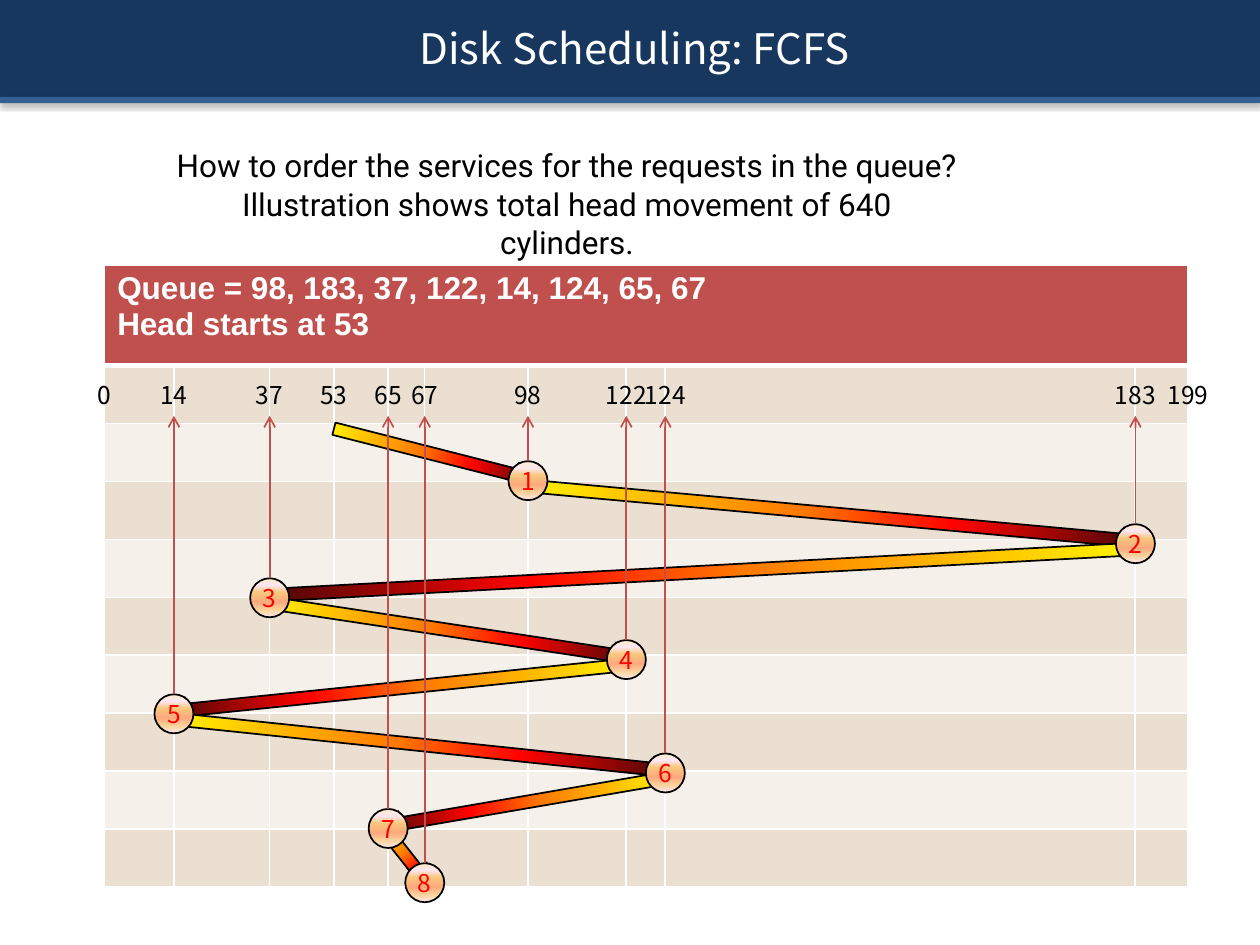
from dataclasses import dataclass
from itertools import accumulate
from math import atan2, degrees, hypot

from lxml import etree
from pptx import Presentation
from pptx.dml.color import RGBColor
from pptx.enum.shapes import MSO_CONNECTOR, MSO_SHAPE
from pptx.enum.text import MSO_ANCHOR, PP_ALIGN
from pptx.oxml.ns import qn
from pptx.util import Pt

RECT, OVAL, ARROW = MSO_SHAPE.RECTANGLE, MSO_SHAPE.OVAL, MSO_SHAPE.RIGHT_ARROW
STRAIGHT = MSO_CONNECTOR.STRAIGHT
LEFT, CENTER = PP_ALIGN.LEFT, PP_ALIGN.CENTER
TOP, MIDDLE = MSO_ANCHOR.TOP, MSO_ANCHOR.MIDDLE


@dataclass(frozen=True)
class Theme:
    navy: str = "17375E"
    blue: str = "376092"
    red: str = "C0504D"
    number: str = "FF0000"
    black: str = "000000"
    white: str = "FFFFFF"
    bands: tuple = ("EBDFD1", "F5F0EA")
    fire: tuple = ((0, "FFF200"), (45, "FF7A00"), (70, "FF0300"), (100, "4D0808"))
    peach: tuple = ((0, "FBEAC7"), (18, "FEE7F2"), (36, "FAC77D"),
                    (61, "FBA97D"), (82, "FBD49C"), (100, "FEE7F2"))
    title_font: str = "Noto Sans CJK KR"
    body_font: str = "Roboto"
    table_font: str = "Arial"
    title: int = 24
    body: int = 18
    label: int = 14


def add_xml(parent, tag, **attrs):
    return etree.SubElement(parent, qn(tag), {k: str(v) for k, v in attrs.items()})


def add_shadow(effects, color, blur, dist, angle, alpha):
    shadow = add_xml(effects, "a:outerShdw", blurRad=Pt(blur), dist=Pt(dist),
                     dir=angle * 60000, algn="ctr", rotWithShape=0)
    add_xml(add_xml(shadow, "a:srgbClr", val=color), "a:alpha", val=alpha * 1000)


def write(tf, text, *, size, font, color, align=LEFT, anchor=TOP, bold=False,
          wrap=True, inset=7.2, shadow=None):
    """Fill a text frame, one paragraph for each line of text."""
    tf.word_wrap = wrap
    tf.vertical_anchor = anchor
    tf.margin_left = tf.margin_right = Pt(inset)
    for i, line in enumerate(text.split("\n")):
        p = tf.paragraphs[0] if i == 0 else tf.add_paragraph()
        p.alignment = align
        r = p.add_run()
        r.text = line
        r.font.size, r.font.name, r.font.bold = Pt(size), font, bold
        r.font.color.rgb = RGBColor.from_string(color)
        if shadow:
            effects = etree.Element(qn("a:effectLst"))
            add_shadow(effects, shadow, 2, 1.5, 45, 100)
            r.font.fill._xPr.find(qn("a:solidFill")).addnext(effects)


class Deck:
    def __init__(self, theme):
        self.t = theme
        self.prs = Presentation()
        self.prs.slide_width, self.prs.slide_height = Pt(720), Pt(540)
        self.s = self.prs.slides.add_slide(self.prs.slide_layouts[6])

    def bar(self, y, h, color):
        sp = self.s.shapes.add_shape(RECT, 0, Pt(y), Pt(720), Pt(h))
        sp.fill.solid()
        sp.fill.fore_color.rgb = RGBColor.from_string(color)
        sp.line.fill.background()
        sp.shadow.inherit = False
        add_shadow(sp._element.spPr.find(qn("a:effectLst")),
                   self.t.black, 3.1, 1.6, 90, 38)

    def text(self, x, y, w, h, text, **fmt):
        sp = self.s.shapes.add_textbox(Pt(x), Pt(y), Pt(w), Pt(h))
        write(sp.text_frame, text, **fmt)

    def gradient_shape(self, kind, x, y, w, h, stops, angle):
        """Outlined preset shape centred on x, y."""
        sp = self.s.shapes.add_shape(kind, Pt(x - w / 2), Pt(y - h / 2), Pt(w), Pt(h))
        sp.shadow.inherit = False
        sp.line.color.rgb = RGBColor.from_string(self.t.black)
        sp.line.width = Pt(1)
        sp.fill.gradient()
        grad = sp._element.spPr.find(qn("a:gradFill"))
        grad.clear()
        grad.set("rotWithShape", "1")
        gs_list = add_xml(grad, "a:gsLst")
        for pos, color in stops:
            add_xml(add_xml(gs_list, "a:gs", pos=pos * 1000), "a:srgbClr", val=color)
        add_xml(grad, "a:lin", ang=angle * 60000, scaled=0)
        return sp

    def block_arrow(self, x1, y1, x2, y2):
        dx, dy = x2 - x1, y2 - y1
        sp = self.gradient_shape(ARROW, (x1 + x2) / 2, (y1 + y2) / 2,
                                 hypot(dx, dy), 14.4, self.t.fire, 0)
        sp.rotation = degrees(atan2(dy, dx))

    def node(self, x, y, size, text):
        sp = self.gradient_shape(OVAL, x, y, size, size, self.t.peach, 90)
        write(sp.text_frame, text, size=self.t.label, font=self.t.title_font,
              color=self.t.number, align=CENTER, anchor=MIDDLE, wrap=False)
        return sp

    def pointer(self, node, x, y_from, y_to):
        c = self.s.shapes.add_connector(STRAIGHT, Pt(x), Pt(y_from), Pt(x), Pt(y_to))
        c.begin_connect(node, 0)
        c.line.color.rgb = RGBColor.from_string(self.t.red)
        c.line.width = Pt(1)
        add_xml(c.line._get_or_add_ln(), "a:tailEnd", type="arrow")
        add_xml(c._element.spPr, "a:effectLst")

    def cell(self, cell, fill, top=1, bottom=1):
        cell.fill.solid()
        cell.fill.fore_color.rgb = RGBColor.from_string(fill)
        tc_pr = cell._tc.get_or_add_tcPr()
        for i, (side, width) in enumerate(zip("LRTB", (1, 1, top, bottom))):
            ln = etree.Element(qn(f"a:ln{side}"), w=str(Pt(width)))
            add_xml(add_xml(ln, "a:solidFill"), "a:srgbClr", val=self.t.white)
            tc_pr.insert(i, ln)

    def table(self, x, y, widths, heights, heading):
        tbl = self.s.shapes.add_table(len(heights), len(widths), Pt(x), Pt(y),
                                      Pt(sum(widths)), Pt(sum(heights))).table
        tbl.first_row = tbl.horz_banding = False
        for col, w in zip(tbl.columns, widths):
            col.width = Pt(w)
        for i, (row, h) in enumerate(zip(tbl.rows, heights)):
            row.height = Pt(h)
            fill = self.t.bands[(i - 1) % 2] if i else self.t.red
            for cell in row.cells:
                self.cell(cell, fill, 3 if i == 1 else 1, 1 if i else 3)
        tbl.cell(0, 0).merge(tbl.cell(0, len(widths) - 1))
        write(tbl.cell(0, 0).text_frame, heading, size=self.t.body,
              font=self.t.table_font, color=self.t.white, bold=True)


def main():
    t = Theme()
    d = Deck(t)

    # Title band
    d.bar(0, 55.4, t.navy)
    d.bar(55.4, 3.6, t.blue)
    d.text(16.6, 4.3, 692, 46, "Disk Scheduling: FCFS", size=t.title,
           font=t.title_font, color=t.white, align=CENTER, anchor=MIDDLE, shadow=t.black)

    # Introduction
    intro = dict(size=t.body, font=t.body_font, color=t.black, align=CENTER, anchor=MIDDLE)
    d.text(91, 79.9, 466, 28.8,
           "How to order the services for the requests in the queue?", **intro)
    d.text(91, 113, 466, 28.8,
           "Illustration shows total head movement of 640 cylinders.", inset=14, **intro)

    # Cylinder grid: each column border stands at one cylinder
    queue, head = [98, 183, 37, 122, 14, 124, 65, 67], 53
    cylinders = sorted([0, head, 199] + queue)
    grid_x = 59.8
    widths = [39.6, 54.7, 36.7, 31, 20.9, 59, 56.2, 22.3, 268.6, 30.2]
    track = dict(zip(cylinders, accumulate(widths, initial=grid_x)))
    d.table(grid_x, 151.4, widths, [57.6] + [33.1] * 9,
            f"Queue = {', '.join(map(str, queue))}\nHead starts at {head}")

    # Head movement from stop to stop
    size = 22.3
    stops_y = [274.7, 310.7, 341.6, 376.9, 407.9, 441.7, 473.4, 504.4]
    stops = [(track[c], y) for c, y in zip(queue, stops_y)]
    starts = [(track[head], 242)] + stops[:-1]
    for (x1, y1), (x2, y2) in zip(starts, stops):
        d.block_arrow(x1, y1 + 3, x2, y2 - 1.5)
    nodes = [d.node(x, y, size, str(i)) for i, (x, y) in enumerate(stops, 1)]

    # Cylinder labels and pointers up to them
    for c, x in track.items():
        w = 17 + 8 * len(str(c))
        d.text(x - w / 2, 213.8, w, 24.5, str(c), size=t.label, font=t.title_font,
               color=t.black, align=CENTER, wrap=False)
    for node, (x, y) in zip(nodes, stops):
        d.pointer(node, x, y - size / 2, 237.6)

    d.prs.save("out.pptx")


if __name__ == "__main__":
    main()
